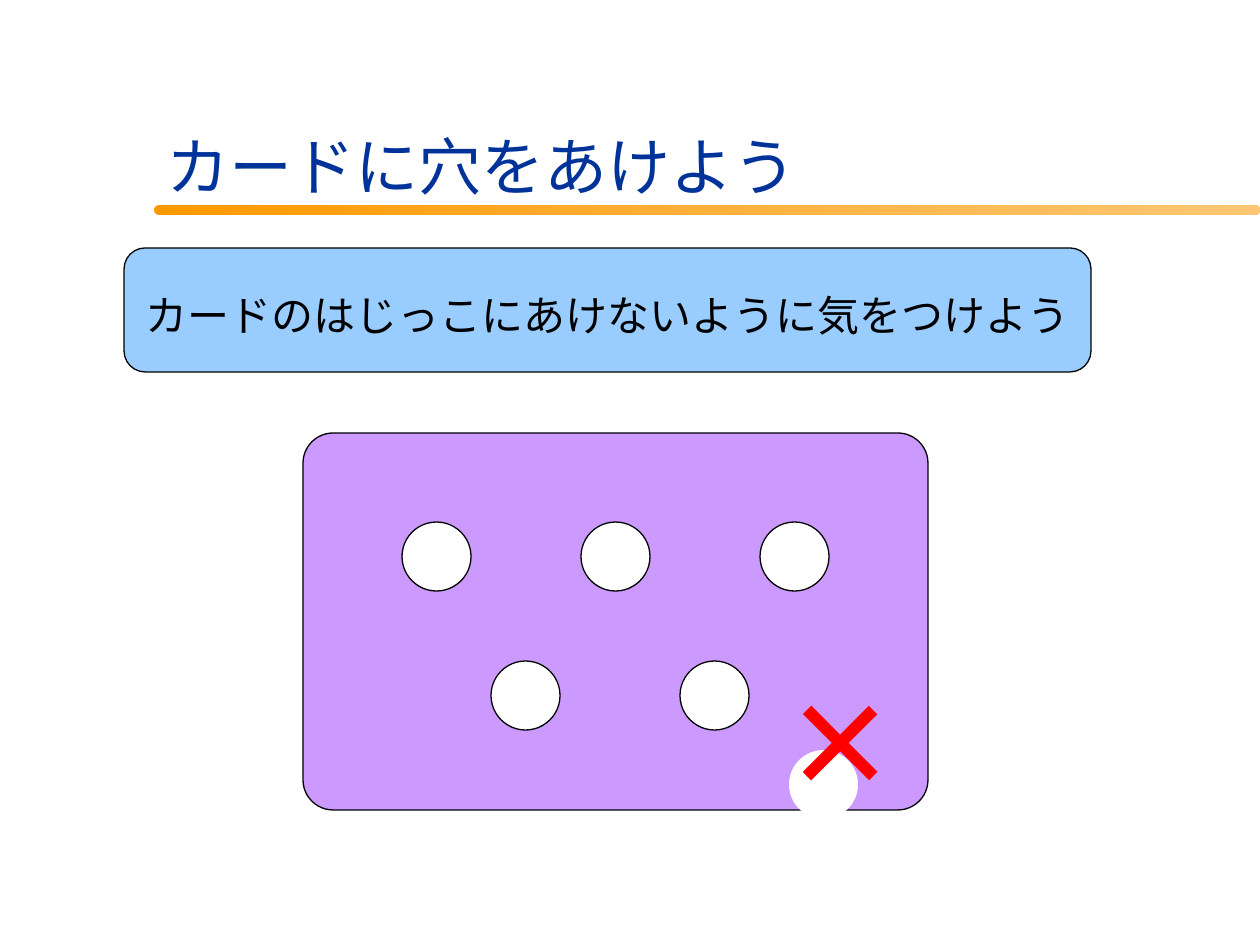
from lxml import etree
from pptx import Presentation
from pptx.dml.color import RGBColor
from pptx.enum.shapes import MSO_SHAPE
from pptx.enum.text import MSO_ANCHOR, PP_ALIGN
from pptx.oxml.ns import qn
from pptx.util import Pt

ROUND, OVAL = MSO_SHAPE.ROUNDED_RECTANGLE, MSO_SHAPE.OVAL
TOP, MIDDLE = MSO_ANCHOR.TOP, MSO_ANCHOR.MIDDLE
LEFT, CENTER = PP_ALIGN.LEFT, PP_ALIGN.CENTER
PX = 914400 / 126
KANA = "Noto Sans CJK JP"
COLORS = {"title": "003399", "bar": "FF9900", "fade": "FFC774", "note": "99CCFF",
          "card": "CC99FF", "hole": "FFFFFF", "ink": "000000", "cross": "FF0000"}
RGB = {name: RGBColor.from_string(code) for name, code in COLORS.items()}

deck = Presentation()
deck.slide_width, deck.slide_height = round(1260 * PX), round(945 * PX)
slide = deck.slides.add_slide(deck.slide_layouts[6])


def draw(kind, box, fill, edge=True, adj=None):
    shape = slide.shapes.add_shape(kind, *[round(n * PX) for n in box])
    shape.shadow.inherit = False
    shape.fill.solid()
    shape.fill.fore_color.rgb = RGB[fill]
    if edge:
        shape.line.color.rgb = RGB["ink"]
        shape.line.width = Pt(0.75)
    else:
        shape.line.fill.background()
    if adj is not None:
        shape.adjustments[0] = adj
    return shape


def write(shape, text, face, size, color, anchor=TOP, align=LEFT, space=1.0, wrap=True):
    frame = shape.text_frame
    frame.word_wrap, frame.vertical_anchor = wrap, anchor
    para = frame.paragraphs[0]
    para.alignment, para.line_spacing = align, space
    run = para.add_run()
    run.text = text
    for key, value in {"name": face, "size": Pt(size)}.items():
        setattr(run.font, key, value)
    run.font.color.rgb = RGB[color]
    # East Asian typeface for the kana
    if face != "Arial":
        etree.SubElement(run.font._element, qn("a:ea")).set("typeface", KANA)


# Rule under the title
bar = draw(ROUND, (154, 205, 1106, 10), "bar", edge=False, adj=0.5)
bar.fill.gradient()
bar.fill.gradient_angle = 0
for stop, name in zip(bar.fill.gradient_stops, ("bar", "fade")):
    stop.color.rgb = RGB[name]

# Title
title = slide.shapes.add_textbox(*[round(n * PX) for n in (154, 121, 893, 88)])
write(title, "カードに穴をあけよう", "Karla", 36, "title", anchor=MIDDLE)

# Advice
note = draw(ROUND, (124, 248, 967, 124), "note", adj=0.17)
write(note, "カードのはじっこにあけないように気をつけよう", KANA, 24, "ink",
      anchor=MIDDLE, align=CENTER, space=1.2, wrap=False)

# Card with two rows of good holes
draw(ROUND, (303, 433, 625, 377), "card", adj=0.08)
HOLE = 69
for left, top, count, step in ((402, 522, 3, 179), (491, 661, 2, 189)):
    for i in range(count):
        draw(OVAL, (left + i * step, top, HOLE, HOLE), "hole")

# Bad hole on the edge, crossed out
draw(OVAL, (789, 750, HOLE, HOLE), "hole", edge=False)
cross = slide.shapes.add_textbox(*[round(n * PX) for n in (779, 585, 189, 254)])
write(cross, "×", "Arial", 96, "cross", space=1.2)

deck.save("out.pptx")
